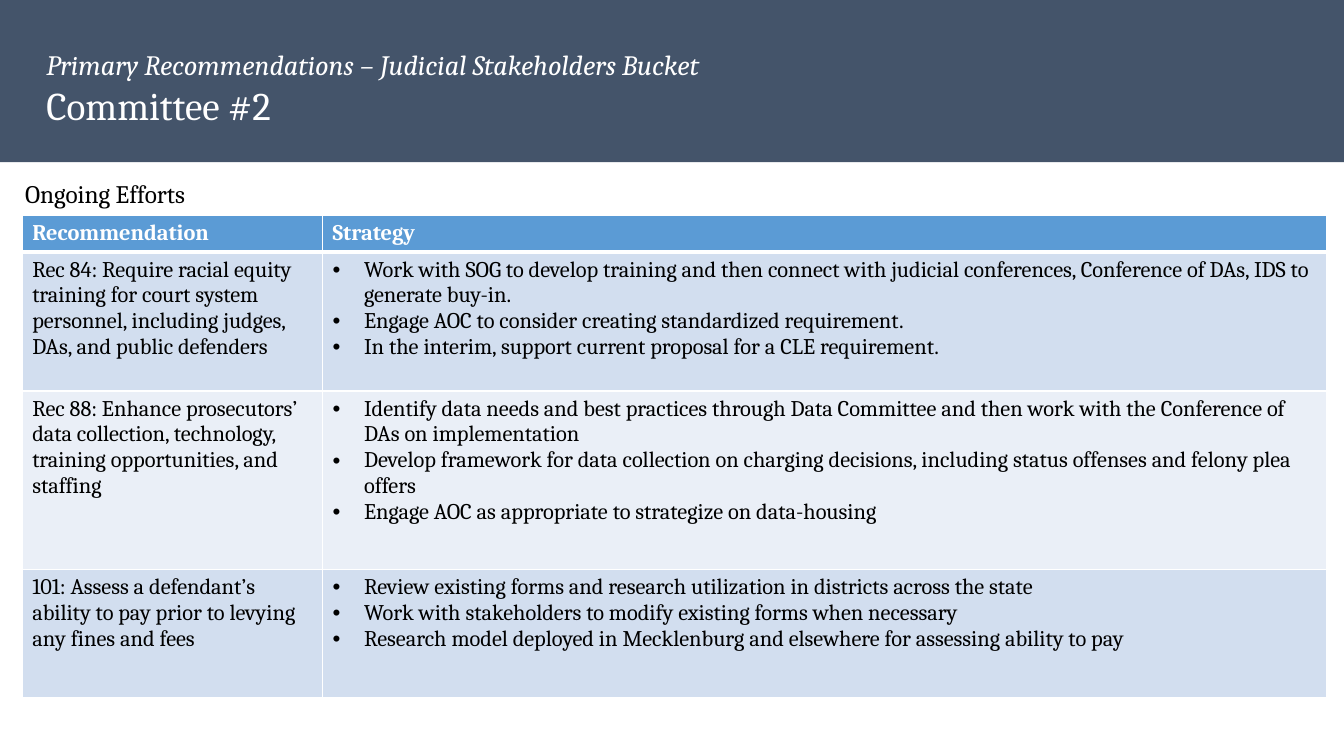
from dataclasses import dataclass

from lxml import etree
from pptx import Presentation
from pptx.dml.color import RGBColor
from pptx.enum.shapes import MSO_SHAPE
from pptx.enum.text import MSO_ANCHOR, MSO_AUTO_SIZE, PP_ALIGN
from pptx.oxml.ns import qn
from pptx.util import Inches, Pt

RECTANGLE = MSO_SHAPE.RECTANGLE
TOP = MSO_ANCHOR.TOP
LEFT = PP_ALIGN.LEFT
NO_AUTOFIT = MSO_AUTO_SIZE.NONE

SLIDE_W, SLIDE_H = Inches(13.33), Inches(7.5)
FONT = "Cambria"
WHITE, BLACK = "FFFFFF", "000000"
SLATE, BLUE = "44546A", "5B9BD5"
BANDS = ("D2DEEF", "EAEFF7")
HEADERS = ("Recommendation", "Strategy")
COLUMNS = (22.35, 74.7)
HEADER_ROW = 4.8
BULLET_INDENT = 2.34


@dataclass(frozen=True)
class Box:
    """A place on the slide, in percent of its width and height."""

    x: float
    y: float
    w: float
    h: float

    def lengths(self) -> tuple[int, int, int, int]:
        """Return left, top, width and height as lengths."""
        return across(self.x), down(self.y), across(self.w), down(self.h)


@dataclass(frozen=True)
class Recommendation:
    """One body row of the table, its height in percent of the slide."""

    text: str
    strategies: tuple[str, ...]
    height: float


RECOMMENDATIONS = (
    Recommendation(
        "Rec 84: Require racial equity training for court system personnel, "
        "including judges, DAs, and public defenders",
        (
            "Work with SOG to develop training and then connect with judicial "
            "conferences, Conference of DAs, IDS to generate buy-in.",
            "Engage AOC to consider creating standardized requirement.",
            "In the interim, support current proposal for a CLE requirement.",
        ),
        18.4,
    ),
    Recommendation(
        "Rec 88: Enhance prosecutors’ data collection, technology, "
        "training opportunities, and staffing",
        (
            "Identify data needs and best practices through Data Committee and "
            "then work with the Conference of DAs on implementation",
            "Develop framework for data collection on charging decisions, "
            "including status offenses and felony plea offers",
            "Engage AOC as appropriate to strategize on data-housing",
        ),
        23.6,
    ),
    Recommendation(
        "101: Assess a defendant’s ability to pay prior to levying any fines and fees",
        (
            "Review existing forms and research utilization in districts across the state",
            "Work with stakeholders to modify existing forms when necessary",
            "Research model deployed in Mecklenburg and elsewhere for assessing ability to pay",
        ),
        16.93,
    ),
)


def across(percent: float) -> int:
    """Return a share of the slide's width."""
    return round(SLIDE_W * percent / 100)


def down(percent: float) -> int:
    """Return a share of the slide's height."""
    return round(SLIDE_H * percent / 100)


def rgb(color: str) -> RGBColor:
    """Turn a hex string into a colour."""
    return RGBColor.from_string(color)


def format_paragraph(p, size: float, color: str, bold=False, italic=False) -> None:
    """Align a paragraph left and format its runs."""
    p.alignment = LEFT
    for r in p.runs:
        r.font.name = FONT
        r.font.size = Pt(size)
        r.font.color.rgb = rgb(color)
        r.font.bold = bold
        r.font.italic = italic


def add_bullet(p) -> None:
    """Give a paragraph a hanging bullet."""
    pPr = p._p.get_or_add_pPr()
    pPr.set("marL", str(across(BULLET_INDENT)))
    pPr.set("indent", str(-across(BULLET_INDENT)))
    etree.SubElement(pPr, qn("a:buFont")).set("typeface", "Arial")
    etree.SubElement(pPr, qn("a:buChar")).set("char", "•")


def add_borders(cell, top: float, bottom: float) -> None:
    """Draw white borders round a cell, one point wide at the sides."""
    tcPr = cell._tc.get_or_add_tcPr()
    for side, width in (("L", 1), ("R", 1), ("T", top), ("B", bottom)):
        ln = etree.SubElement(tcPr, qn(f"a:ln{side}"), w=str(Pt(width)))
        fill = etree.SubElement(ln, qn("a:solidFill"))
        etree.SubElement(fill, qn("a:srgbClr"), val=WHITE)


def fill_cell(cell, text: str, fill: str, color: str, bold=False, bullets=False) -> None:
    """Write and format the text of a cell."""
    cell.text_frame.text = text
    for p in cell.text_frame.paragraphs:
        format_paragraph(p, 16, color, bold)
        if bullets:
            add_bullet(p)
    cell.fill.solid()
    cell.fill.fore_color.rgb = rgb(fill)


def add_title(s) -> None:
    """Place the two-line title on its dark band."""
    band = s.shapes.add_shape(RECTANGLE, *Box(0, 0, 100, 21.47).lengths())
    band.shadow.inherit = False
    band.fill.solid()
    band.fill.fore_color.rgb = rgb(SLATE)
    band.line.fill.background()

    title = s.shapes.title
    title.element.addprevious(band.element)
    title.left, title.top, title.width, title.height = Box(2.7, 5.6, 58.5, 12.13).lengths()
    tf = title.text_frame
    tf.text = "Primary Recommendations – Judicial Stakeholders Bucket\nCommittee #2"
    tf.word_wrap = True
    tf.auto_size = NO_AUTOFIT
    tf.vertical_anchor = TOP
    bucket, committee = tf.paragraphs
    format_paragraph(bucket, 20, WHITE, italic=True)
    format_paragraph(committee, 28, WHITE)


def add_table(s) -> None:
    """Add the table of recommendations and strategies."""
    heights = (HEADER_ROW, *(rec.height for rec in RECOMMENDATIONS))
    box = Box(1.65, 28.53, sum(COLUMNS), sum(heights))
    table = s.shapes.add_table(len(heights), len(COLUMNS), *box.lengths()).table
    for column, width in zip(table.columns, COLUMNS):
        column.width = across(width)
    for i, height in enumerate(heights):
        table.rows[i].height = down(height)
        for cell in table.rows[i].cells:
            add_borders(cell, 3 if i == 1 else 1, 3 if i == 0 else 1)
    for cell, header in zip(table.rows[0].cells, HEADERS):
        fill_cell(cell, header, BLUE, WHITE, bold=True)
    for i, rec in enumerate(RECOMMENDATIONS):
        fill = BANDS[i % len(BANDS)]
        fill_cell(table.cell(i + 1, 0), rec.text, fill, BLACK)
        fill_cell(table.cell(i + 1, 1), "\n".join(rec.strategies), fill, BLACK, bullets=True)


def add_label(s) -> None:
    """Add the label above the table."""
    tf = s.shapes.add_textbox(*Box(1.13, 22.93, 52.95, 5.33).lengths()).text_frame
    tf.word_wrap = True
    tf.text = "Ongoing Efforts"
    format_paragraph(tf.paragraphs[0], 18, BLACK)


def main() -> None:
    """Build the slide and save it."""
    prs = Presentation()
    prs.slide_width, prs.slide_height = SLIDE_W, SLIDE_H
    s = prs.slides.add_slide(prs.slide_layouts.get_by_name("Title Only"))
    add_title(s)
    add_table(s)
    add_label(s)
    prs.save("out.pptx")


if __name__ == "__main__":
    main()
